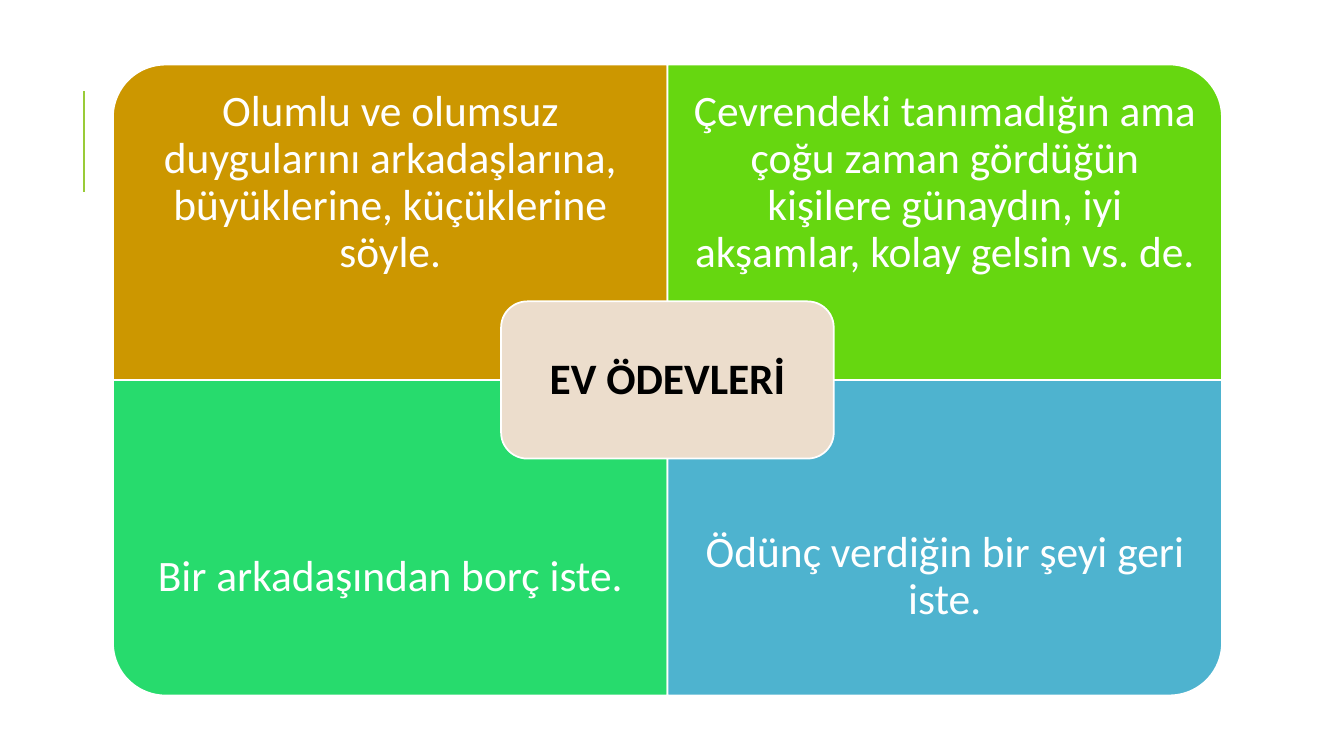
from pptx import Presentation
from pptx.dml.color import RGBColor
from pptx.enum.shapes import MSO_CONNECTOR, MSO_SHAPE
from pptx.enum.text import MSO_ANCHOR, MSO_AUTO_SIZE, PP_ALIGN
from pptx.oxml.ns import qn
from pptx.util import Pt
from lxml.etree import SubElement

PX = 9144  # EMU in one px, 100 px to the inch

THEME = {
    "font": "Calibri",
    "size": 31,
    "edge": 1.25,
    "rule": 1.5,
    "white": "FFFFFF",
    "black": "000000",
    "lime": "99CB38",
    "gold": "CC9700",
    "green": "66D710",
    "mint": "27DB6D",
    "blue": "4EB3CF",
    "sand": "ECDDCC",
}

# Text, fill and turn of each quarter, row by row
TASKS = [
    ("Olumlu ve olumsuz duygularını arkadaşlarına, büyüklerine, küçüklerine söyle.",
     "gold", 270),
    ("Çevrendeki tanımadığın ama çoğu zaman gördüğün kişilere günaydın, iyi "
     "akşamlar, kolay gelsin vs. de.", "green", 0),
    ("Bir arkadaşından borç iste.", "mint", 180),
    ("Ödünç verdiğin bir şeyi geri iste.", "blue", 90),
]


def color(name):
    return RGBColor.from_string(THEME[name])


def apply(item, form):
    for name, value in form.items():
        setattr(item, name, value)


def place(item, box):
    names = ("left", "top", "width", "height")
    apply(item, {name: round(v * PX) for name, v in zip(names, box)})


def write(item, text, tone, pad, bold=False):
    frame = item.text_frame
    frame.text = text
    apply(frame, {"word_wrap": True, "auto_size": MSO_AUTO_SIZE.NONE,
                  "vertical_anchor": MSO_ANCHOR.MIDDLE})
    apply(frame, {f"margin_{side}": pad * PX
                  for side in ("left", "top", "right", "bottom")})
    para = frame.paragraphs[0]
    apply(para, {"alignment": PP_ALIGN.CENTER, "line_spacing": 0.9})
    apply(para.font, {"name": THEME["font"], "size": Pt(THEME["size"]),
                      "bold": bold})
    para.font.color.rgb = color(tone)


def panel(slide, kind, box, fill, turn=0):
    x, y, w, h = box
    if turn % 180:  # a quarter turn swaps the sides about the centre
        x, y, w, h = x + (w - h) / 2, y + (h - w) / 2, h, w
    shape = slide.shapes.add_shape(kind, 0, 0, 0, 0)
    place(shape, (x, y, w, h))
    shape.rotation = turn
    shape.shadow.inherit = False
    shape.fill.solid()
    shape.fill.fore_color.rgb = color(fill)
    shape.line.color.rgb = color("white")
    shape.line.width = Pt(THEME["edge"])


def accent(slide, box):
    x, y, w, h = (v * PX for v in box)
    rule = slide.shapes.add_connector(MSO_CONNECTOR.STRAIGHT, x, y + h, x + w, y)
    rule.line.color.rgb = color("lime")
    rule.line.width = Pt(THEME["rule"])
    SubElement(rule._element.spPr, qn("a:effectLst"))


def matrix(slide, box):
    left, top, width, height = box
    w, h = width // 2, height // 2
    deep = h * 3 // 4 + 1  # text keeps to the outer part of its quarter
    for i, (text, fill, turn) in enumerate(TASKS):
        row, col = divmod(i, 2)
        x, y = left + col * w, top + row * h
        panel(slide, MSO_SHAPE.ROUND_1_RECTANGLE, (x, y, w, h), fill, turn)
        note = slide.shapes.add_textbox(0, 0, 0, 0)
        place(note, (x, y + row * (h - deep), w, deep))
        write(note, text, "white", 24)


def center(slide, box):
    left, top, width, height = box
    w, h = 330, 156
    x, y = left + (width - w) // 2, top + (height - h) // 2
    panel(slide, MSO_SHAPE.ROUNDED_RECTANGLE, (x, y, w, h), "sand")
    title = slide.shapes.title
    place(title, (x + 7, y + 7, w - 14, h - 14))
    write(title, "EV ÖDEVLERİ", "black", 13, True)
    slide.shapes._spTree.append(title._element)  # bring to the front


def main():
    deck = Presentation()
    apply(deck, {"slide_width": 1333 * PX, "slide_height": 750 * PX})
    slide = deck.slides.add_slide(deck.slide_layouts[5])
    box = (112, 64, 1100, 626)
    accent(slide, (83, 90, 0, 100))
    matrix(slide, box)
    center(slide, box)
    deck.save("out.pptx")


if __name__ == "__main__":
    main()
